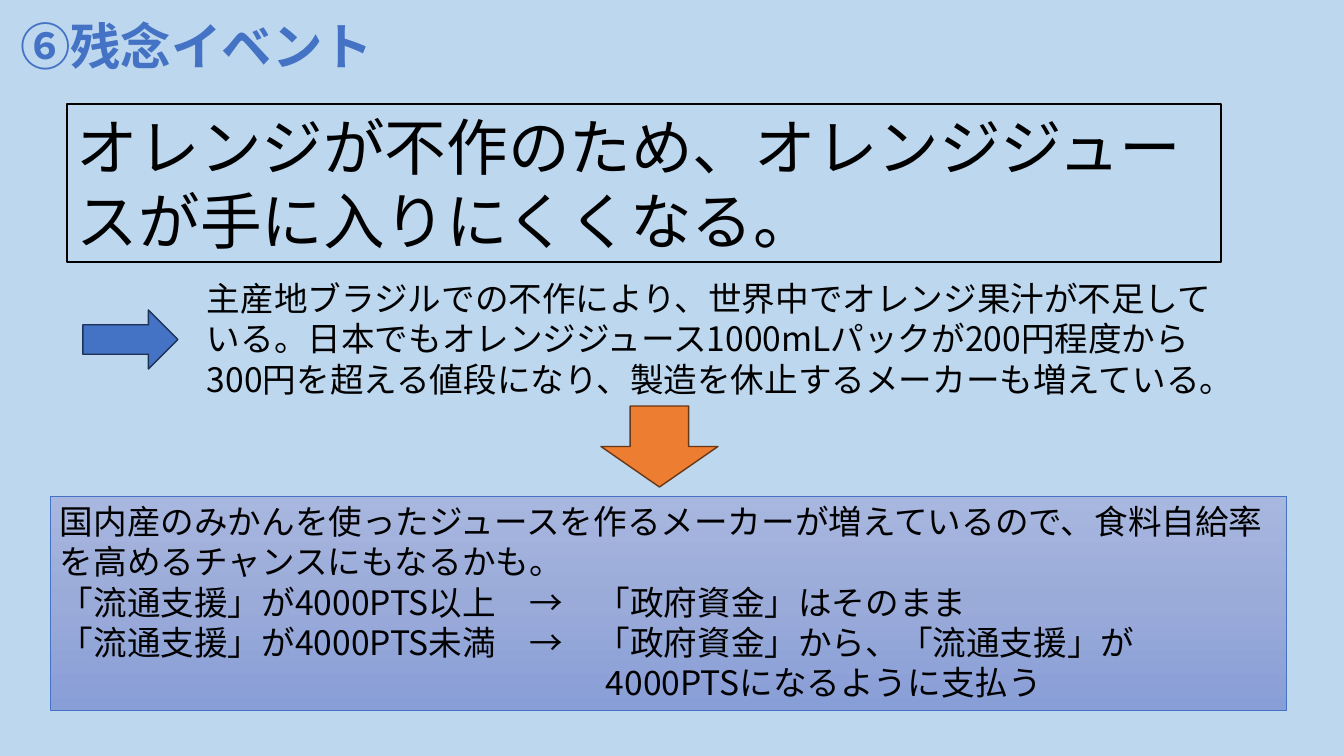
from copy import deepcopy
from lxml.etree import SubElement
from pptx import Presentation
from pptx.dml.color import RGBColor
from pptx.enum.shapes import MSO_SHAPE as Kind
from pptx.enum.text import MSO_ANCHOR as Anchor, MSO_AUTO_SIZE as Fit, PP_ALIGN as Align
from pptx.oxml.ns import qn
from pptx.util import Emu, Pt

TITLE = ["⑥残念イベント"]
EVENT = ["オレンジが不作のため、オレンジジュースが手に入りにくくなる。"]
CAUSE = ["主産地ブラジルでの不作により、世界中でオレンジ果汁が不足している。"
         "日本でもオレンジジュース1000mLパックが200円程度から300円を超える値段になり、"
         "製造を休止するメーカーも増えている。"]
RULES = [
    "国内産のみかんを使ったジュースを作るメーカーが増えているので、"
    "食料自給率を高めるチャンスにもなるかも。",
    "「流通支援」が4000PTS以上　→　「政府資金」はそのまま",
    "「流通支援」が4000PTS未満　→　「政府資金」から、「流通支援」が",
    "4000PTSになるように支払う",
]
PLACE = {
    "event": (67, 104, 1154, 158),
    "cause": (197, 273, 1035, 132),
    "right": (83, 310, 95, 59),
    "down": (601, 406, 117, 81),
    "title": (10, 10, 373, 74),
    "rules": (50, 496, 1236, 214),
}
INDENT = 546
THEME = {
    "font": "Noto Sans CJK JP",
    "back": "BDD7EE", "ink": "000000",
    "blue": "4472C4", "navy": "1E3256",
    "warm": "ED7D31", "rust": "683715",
    "fade": ["A8B7DF", "9AABD9", "889ED7"],
    "head": 36, "big": 44, "body": 24,
}


def px(n):
    return Emu(round(n * 914400 / 100.8))


def box(name):
    return [px(n) for n in PLACE[name]]


def tint(name):
    return RGBColor.from_string(THEME[name])


def write(shape, lines, size="body", color="ink", bold=False,
          align=Align.LEFT, wrap=True):
    frame = shape.text_frame
    frame.word_wrap = wrap
    frame.auto_size = Fit.SHAPE_TO_FIT_TEXT
    frame.vertical_anchor = Anchor.TOP
    for i, line in enumerate(lines):
        para = frame.paragraphs[0] if i == 0 else frame.add_paragraph()
        para.alignment = align
        run = para.add_run()
        run.text = line
        font = run.font
        font.name = THEME["font"]
        font.size = Pt(THEME[size])
        font.bold = bold
        font.color.rgb = tint(color)
        SubElement(font._element, qn("a:ea"), typeface=THEME["font"])


def draw(kind, name, fill=None, line="ink", width=1):
    shape = slide.shapes.add_shape(kind, *box(name))
    shape.shadow.inherit = False
    if fill:
        shape.fill.solid()
        shape.fill.fore_color.rgb = tint(fill)
    else:
        shape.fill.background()
    shape.line.color.rgb = tint(line)
    shape.line.width = Pt(width)
    return shape


def fade(shape, hues):
    fill = shape.fill
    fill.gradient()
    fill.gradient_angle = 270
    stops = shape._element.spPr.find(qn("a:gradFill")).find(qn("a:gsLst"))
    while len(stops) < len(hues):
        stops.insert(1, deepcopy(stops[0]))
    for i, (stop, hue) in enumerate(zip(fill.gradient_stops, hues)):
        stop.position = i / (len(hues) - 1)
        stop.color.rgb = RGBColor.from_string(hue)


deck = Presentation()
deck.slide_width, deck.slide_height = px(1344), px(756)
slide = deck.slides.add_slide(deck.slide_layouts[6])
slide.background.fill.solid()
slide.background.fill.fore_color.rgb = tint("back")

write(draw(Kind.RECTANGLE, "event"), EVENT, size="big")
write(slide.shapes.add_textbox(*box("cause")), CAUSE)
draw(Kind.RIGHT_ARROW, "right", fill="blue", line="navy")
draw(Kind.DOWN_ARROW, "down", fill="warm", line="rust")
write(slide.shapes.add_textbox(*box("title")), TITLE, size="head",
      color="blue", bold=True, align=Align.CENTER, wrap=False)

rules = draw(Kind.RECTANGLE, "rules", line="blue", width=0.5)
fade(rules, THEME["fade"])
write(rules, RULES)
last = rules.text_frame.paragraphs[-1]
last._p.get_or_add_pPr().set("marL", str(px(INDENT)))

deck.save("out.pptx")
